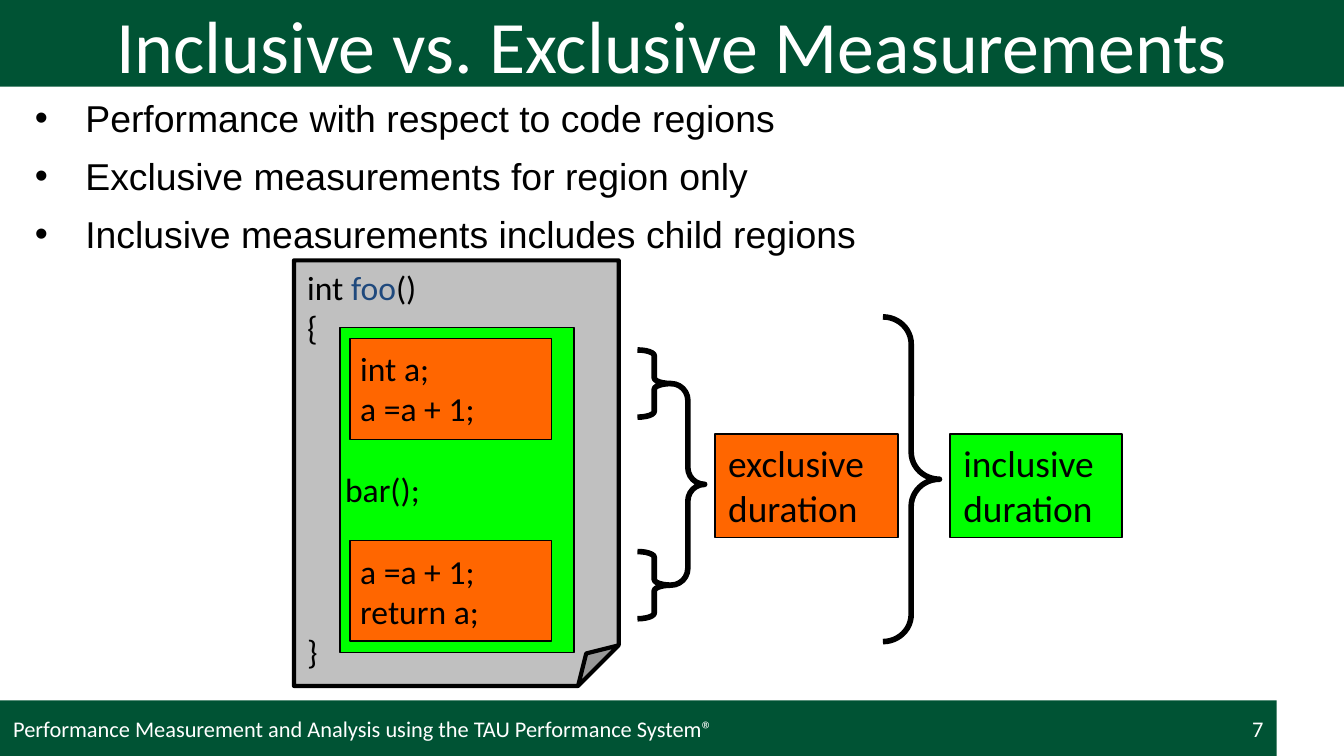
from lxml import etree
from pptx import Presentation
from pptx.dml.color import RGBColor
from pptx.enum.shapes import MSO_SHAPE
from pptx.enum.text import MSO_ANCHOR, MSO_AUTO_SIZE, PP_ALIGN
from pptx.oxml.ns import qn
from pptx.util import Pt

RECT, FOLDED, BRACE = MSO_SHAPE.RECTANGLE, MSO_SHAPE.FOLDED_CORNER, MSO_SHAPE.RIGHT_BRACE
TOP, MIDDLE = MSO_ANCHOR.TOP, MSO_ANCHOR.MIDDLE
LEFT, CENTER, RIGHT = PP_ALIGN.LEFT, PP_ALIGN.CENTER, PP_ALIGN.RIGHT

THEME = {
    "banner": "005334", "paper": "C0C0C0", "inclusive": "00FF00", "exclusive": "FF6600",
    "ink": "000000", "light": "FFFFFF", "function": "1F497D",
    "heading_font": "Calibri", "body_font": "Arial",
    "title": 39.6, "body": 20, "code": 18, "footer": 12,
}

TITLE = "Inclusive vs. Exclusive Measurements"
POINTS = [
    "Performance with respect to code regions",
    "Exclusive measurements for region only",
    "Inclusive measurements includes child regions",
]
FOOTER = "Performance Measurement and Analysis using the TAU Performance System®"
PAGE = "7"
CODE = [
    [("int ", "ink"), ("foo", "function"), ("()", "ink")],
    "{",
    "       int a;",
    "       a =a + 1;",
    "",
    "     bar();",
    "",
    "       a =a + 1;",
    "       return a;",
    "}",
]
LABELS = [
    (["exclusive", "duration"], "exclusive", 383, 98),
    (["inclusive", "duration"], "inclusive", 509, 92),
]

CODE_LINE = 22
PAPER = (157.5, 139.5, 174, 228)
INCLUSIVE_REGION = (182.2, 175.5, 125.3, 174)
REGION_LEFT, REGION_WIDTH, REGION_HEIGHT = 187.5, 108, 54
REGION_TOPS = [181.5, 289.5]
BRACE_WIDTH, SMALL_BRACE_HEIGHT, SMALL_BRACE_LEFT = 18, 36, 341.5
LABEL_TOP, LABEL_HEIGHT = 232.5, 55.5

prs = Presentation()
prs.slide_width, prs.slide_height = Pt(720), Pt(405)
slide = prs.slides.add_slide(prs.slide_layouts[1])
title, body = slide.placeholders


def apply(target, values):
    for name, value in values.items():
        setattr(target, name, value)


def place(shape, box):
    apply(shape, dict(zip(("left", "top", "width", "height"), map(Pt, box))))


def color(key):
    return RGBColor.from_string(THEME[key])


def draw(kind, box, fill=None, line=None, adjust=None):
    shape = slide.shapes.add_shape(kind, *map(Pt, box))
    shape.shadow.inherit = False
    if fill:
        shape.fill.solid()
        shape.fill.fore_color.rgb = color(fill)
    else:
        shape.fill.background()
    if line:
        shape.line.color.rgb = color("ink")
        shape.line.width = Pt(line)
    else:
        shape.line.fill.background()
    if adjust:
        guides = next(shape._element.iter(qn("a:avLst")))
        for guide in list(guides):
            guides.remove(guide)
        for name, value in adjust.items():
            etree.SubElement(guides, qn("a:gd"), name=name, fmla=f"val {round(value * 100000)}")
    return shape


def write(shape, lines, size, ink="ink", font="heading_font", align=LEFT,
          anchor=TOP, wrap=False, inset=None, blank=0, after=0):
    frame = shape.text_frame
    apply(frame, {"word_wrap": wrap, "auto_size": MSO_AUTO_SIZE.NONE, "vertical_anchor": anchor})
    if inset is not None:
        sides = ("margin_left", "margin_top", "margin_right", "margin_bottom")
        apply(frame, dict.fromkeys(sides, Pt(inset)))
    gap, started = 0, False
    for line in lines:
        if not line:
            gap += blank
            continue
        paragraph = frame.add_paragraph() if started else frame.paragraphs[0]
        apply(paragraph, {"alignment": align, "space_before": Pt(gap), "space_after": Pt(after)})
        for text, key in [(line, ink)] if isinstance(line, str) else line:
            run = paragraph.add_run()
            run.text = text
            apply(run.font, {"name": THEME[font], "size": Pt(THEME[size])})
            run.font.color.rgb = color(key)
        gap, started = 0, True


for bar_box in [(0, -0.5, 720, 47), (0, 375.3, 684, 29.7)]:
    bar = draw(RECT, bar_box, "banner")
    title._element.addprevious(bar._element)

place(title, (36, 0, 648, 46.8))
write(title, [TITLE], "title", "light", align=CENTER, anchor=MIDDLE)
place(body, (11.5, 47.5, 695.5, 328))
write(body, POINTS, "body", font="body_font", wrap=True, after=7)
for paragraph in body.text_frame.paragraphs:
    properties = paragraph._p.get_or_add_pPr()
    properties.set("marL", str(Pt(27)))
    properties.set("indent", str(-Pt(27)))

for text, left, width, align in [(FOOTER, 0, 474, LEFT), (PAGE, 516, 168, RIGHT)]:
    footer = slide.shapes.add_textbox(Pt(left), Pt(376), Pt(width), Pt(29))
    write(footer, [text], "footer", "light", align=align, anchor=MIDDLE, wrap=True, inset=7.2)

draw(FOLDED, PAPER, "paper", 2.25, {"adj": 0.125})
draw(RECT, INCLUSIVE_REGION, "inclusive", 0.75)

for region_top in REGION_TOPS:
    draw(RECT, (REGION_LEFT, region_top, REGION_WIDTH, REGION_HEIGHT), "exclusive", 0.75)
    brace_top = region_top + 6
    draw(BRACE, (SMALL_BRACE_LEFT, brace_top, BRACE_WIDTH, SMALL_BRACE_HEIGHT),
         line=3, adjust={"adj1": 0.17, "adj2": 0.5})

join_top = REGION_TOPS[0] + 6 + SMALL_BRACE_HEIGHT / 2
join_height = REGION_TOPS[1] - REGION_TOPS[0]
draw(BRACE, (SMALL_BRACE_LEFT + BRACE_WIDTH, join_top, BRACE_WIDTH, join_height),
     line=3, adjust={"adj1": 0.5, "adj2": 0.5})
draw(BRACE, (473, 169.8, 30.3, 174), line=3, adjust={"adj1": 0.48, "adj2": 0.5})

for lines, fill, left, width in LABELS:
    label = draw(RECT, (left, LABEL_TOP, width, LABEL_HEIGHT), fill, 1)
    write(label, lines, "body")

code = slide.shapes.add_textbox(*map(Pt, (157.5, 139.5, 121.5, 225.5)))
write(code, CODE, "code", blank=CODE_LINE)

prs.save("out.pptx")
